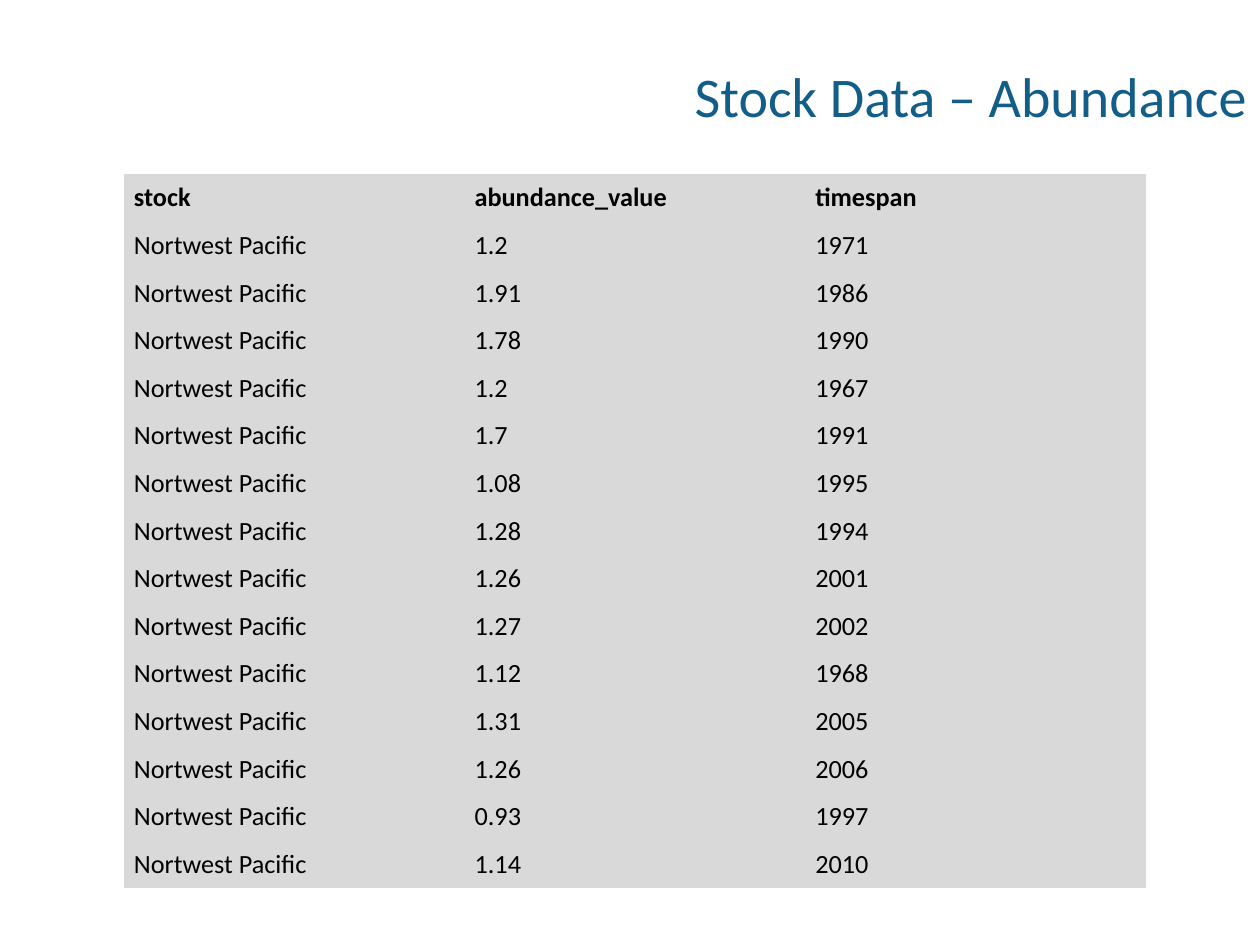
import pptx
import pptx.dml.color
import pptx.enum.text
import pptx.oxml.ns
import pptx.util

EMU_PER_PX = 914400 / 126
FONT = "Calibri"
COLORS = {"title": "125E89", "text": "000000", "cell": "D9D9D9"}
NO_STYLE_NO_GRID = "{2D5ABB26-0587-4C30-8999-92F81FD0307C}"
HEADERS = ("stock", "abundance_value", "timespan")
STOCK = "Nortwest Pacific"
ABUNDANCE = (
    ("1.2", "1971"), ("1.91", "1986"), ("1.78", "1990"), ("1.2", "1967"),
    ("1.7", "1991"), ("1.08", "1995"), ("1.28", "1994"), ("1.26", "2001"),
    ("1.27", "2002"), ("1.12", "1968"), ("1.31", "2005"), ("1.26", "2006"),
    ("0.93", "1997"), ("1.14", "2010"),
)


def px(length):
    """Return a pixel length in EMU."""
    return pptx.util.Emu(round(length * EMU_PER_PX))


def rgb(role):
    """Return the colour for a role."""
    return pptx.dml.color.RGBColor.from_string(COLORS[role])


def write_text(frame, text, size, role, bold=False):
    """Write one formatted line into a text frame."""
    frame.text = text
    font = frame.paragraphs[0].runs[0].font
    font.name = FONT
    font.size = pptx.util.Pt(size)
    font.bold = bold
    font.color.rgb = rgb(role)


def place_title(slide, text):
    """Fill and position the slide title."""
    title = slide.shapes.title
    title.left, title.top, title.width, title.height = map(px, (357, 16, 903, 158))
    write_text(title.text_frame, text, 32, "title")
    title.text_frame.vertical_anchor = pptx.enum.text.MSO_ANCHOR.MIDDLE
    title.text_frame.paragraphs[0].alignment = pptx.enum.text.PP_ALIGN.RIGHT


def fill_cell(cell, text, bold):
    """Write and format one table cell."""
    write_text(cell.text_frame, text, 15, "text", bold)
    cell.vertical_anchor = pptx.enum.text.MSO_ANCHOR.MIDDLE
    cell.margin_left = cell.margin_right = px(10)
    cell.margin_top = cell.margin_bottom = px(5)
    cell.fill.solid()
    cell.fill.fore_color.rgb = rgb("cell")


def add_abundance_table(slide):
    """Add the table of abundance values by year."""
    rows = [HEADERS] + [(STOCK, value, year) for value, year in ABUNDANCE]
    frame = slide.shapes.add_table(
        len(rows), len(HEADERS), px(124), px(174), px(1022), px(715))
    table = frame.table
    table.horz_banding = False
    style = table._tbl.tblPr.find(pptx.oxml.ns.qn("a:tableStyleId"))
    style.text = NO_STYLE_NO_GRID
    for row_index, row in enumerate(rows):
        for column_index, text in enumerate(row):
            fill_cell(table.cell(row_index, column_index), text, row_index == 0)


def main():
    """Build and save the abundance slide."""
    deck = pptx.Presentation()
    deck.slide_width, deck.slide_height = px(1260), px(945)
    slide = deck.slides.add_slide(deck.slide_layouts.get_by_name("Title Only"))
    place_title(slide, "Stock Data – Abundance")
    add_abundance_table(slide)
    deck.save("out.pptx")


if __name__ == "__main__":
    main()
